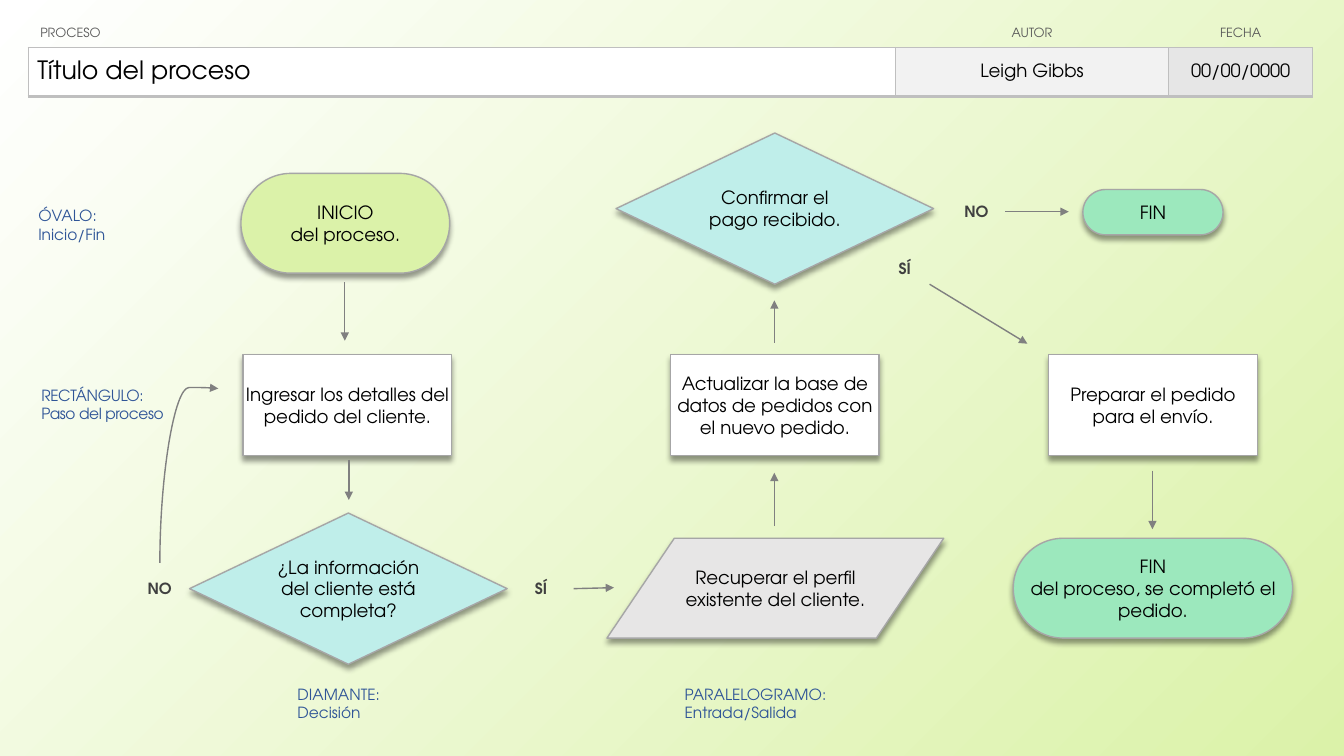
from lxml.etree import SubElement
from pptx import Presentation
from pptx.dml.color import RGBColor
from pptx.enum.shapes import MSO_CONNECTOR, MSO_SHAPE
from pptx.enum.text import MSO_ANCHOR, PP_ALIGN
from pptx.oxml.ns import qn
from pptx.util import Inches, Pt

FONT = "TeX Gyre Adventor"
BLACK = RGBColor(0x00, 0x00, 0x00)
WHITE = RGBColor(0xFF, 0xFF, 0xFF)
LIME = RGBColor(0xDB, 0xF2, 0xA9)
MINT = RGBColor(0x9C, 0xE8, 0xBD)
AQUA = RGBColor(0xBF, 0xEE, 0xEA)
SILVER = RGBColor(0xE7, 0xE6, 0xE6)
OUTLINE = RGBColor(0xA6, 0xA6, 0xA6)
ARROW = RGBColor(0x80, 0x80, 0x80)
LEGEND = RGBColor(0x2F, 0x55, 0x97)
ANSWER = RGBColor(0x40, 0x40, 0x40)
HEADING = RGBColor(0x59, 0x59, 0x59)
AUTHOR_FILL = RGBColor(0xF2, 0xF2, 0xF2)
DATE_FILL = RGBColor(0xE6, 0xE6, 0xE6)
BORDER = RGBColor(0xBF, 0xBF, 0xBF)


def write(frame, text, size, color, align, inset=0.02, bold=False):
    """Fill a text frame, one paragraph per line of text."""
    frame.text = text
    frame.word_wrap = True
    frame.vertical_anchor = MSO_ANCHOR.MIDDLE
    frame.margin_left = frame.margin_right = Inches(inset)
    frame.margin_top = frame.margin_bottom = Inches(inset)
    for paragraph in frame.paragraphs:
        paragraph.alignment = align
        paragraph.font.name = FONT
        paragraph.font.size = Pt(size)
        paragraph.font.bold = bold
        paragraph.font.color.rgb = color


def add_arrow(kind, x1, y1, x2, y2):
    arrow = slide.shapes.add_connector(
        kind, Inches(x1), Inches(y1), Inches(x2), Inches(y2))
    arrow.line.color.rgb = ARROW
    arrow.line.width = Pt(1)
    properties = arrow.element.spPr
    SubElement(properties.find(qn("a:ln")), qn("a:tailEnd"), type="triangle")
    SubElement(properties, qn("a:effectLst"))
    return arrow


presentation = Presentation()
presentation.slide_width = Inches(13.33)
presentation.slide_height = Inches(7.5)
slide = presentation.slides.add_slide(presentation.slide_layouts[6])

backdrop = slide.background.fill
backdrop.gradient()
backdrop.gradient_angle = 315
for stop, color, position in zip(backdrop.gradient_stops, (WHITE, LIME), (0, 1)):
    stop.color.rgb = color
    stop.position = position

# Header table
header = slide.shapes.add_table(
    2, 3, Inches(0.28), Inches(0.19), Inches(12.74), Inches(0.77)).table
header.first_row = header.horz_banding = False
NO_STYLE = "{2D5ABB26-0587-4C30-8999-92F81FD0307C}"
header._tbl.tblPr.find(qn("a:tableStyleId")).text = NO_STYLE
for row, height in zip(header.rows, (0.28, 0.49)):
    row.height = Inches(height)

header_columns = [
    # width, heading, value, value size, fill, alignment, left insets
    (8.6, "PROCESO", "Título del proceso", 18, WHITE, PP_ALIGN.LEFT, (0.12, 0.09)),
    (2.71, "AUTOR", "Leigh Gibbs", 13, AUTHOR_FILL, PP_ALIGN.CENTER, (0.01, 0.01)),
    (1.43, "FECHA", "00/00/0000", 13, DATE_FILL, PP_ALIGN.CENTER, (0.01, 0.01)),
]
for index, (width, heading, value, size, fill, align, insets) in enumerate(header_columns):
    header.columns[index].width = Inches(width)
    heading_cell, value_cell = header.cell(0, index), header.cell(1, index)
    write(heading_cell.text_frame, heading, 9, HEADING, align)
    write(value_cell.text_frame, value, size, BLACK, align)
    for cell, inset in zip((heading_cell, value_cell), insets):
        cell.vertical_anchor = MSO_ANCHOR.MIDDLE
        cell.margin_left = Inches(inset)
        cell.margin_right = cell.margin_top = Inches(0.01)
        cell.margin_bottom = 0
    heading_cell.fill.background()
    edges = value_cell._tc.get_or_add_tcPr()
    for side, points in (("L", 1), ("R", 1), ("T", 1), ("B", 2.25)):
        edge = SubElement(edges, qn(f"a:ln{side}"), w=str(Pt(points)))
        paint = SubElement(edge, qn("a:solidFill"))
        SubElement(paint, qn("a:srgbClr"), val=str(BORDER))
    value_cell.fill.solid()
    value_cell.fill.fore_color.rgb = fill

# Process steps
OVAL = MSO_SHAPE.ROUNDED_RECTANGLE
STEP = MSO_SHAPE.FLOWCHART_PROCESS
DECISION = MSO_SHAPE.FLOWCHART_DECISION
DATA = MSO_SHAPE.FLOWCHART_DATA
steps = [
    (OVAL, 2.39, 1.72, 2.07, 0.99, LIME, "INICIO\ndel proceso."),
    (STEP, 2.41, 3.52, 2.07, 1, WHITE, "Ingresar los detalles del pedido del cliente."),
    (DECISION, 1.88, 5.09, 3.15, 1.5, AQUA, "¿La información del cliente está completa?"),
    (DATA, 6.02, 5.34, 3.34, 0.99, SILVER, "Recuperar el perfil existente del cliente."),
    (STEP, 6.65, 3.52, 2.07, 1, WHITE,
     "Actualizar la base de datos de pedidos con el nuevo pedido."),
    (DECISION, 6.11, 1.32, 3.15, 1.5, AQUA, "Confirmar el pago recibido."),
    (OVAL, 10.74, 1.88, 1.39, 0.45, MINT, "FIN"),
    (STEP, 10.4, 3.52, 2.07, 1, WHITE, "Preparar el pedido\npara el envío."),
    (OVAL, 10.05, 5.34, 2.77, 0.99, MINT, "FIN\ndel proceso, se completó el pedido."),
]
for kind, left, top, width, height, fill, text in steps:
    step = slide.shapes.add_shape(
        kind, Inches(left), Inches(top), Inches(width), Inches(height))
    if kind == OVAL:
        step.adjustments[0] = 0.5
    step.fill.solid()
    step.fill.fore_color.rgb = fill
    step.line.color.rgb = OUTLINE
    step.line.width = Pt(1)
    step.shadow.inherit = False
    shadow = SubElement(
        step.element.spPr.find(qn("a:effectLst")), qn("a:outerShdw"),
        blurRad=str(Pt(4)), dist=str(Pt(3)), dir="5400000", algn="t", rotWithShape="0")
    shade = SubElement(shadow, qn("a:srgbClr"), val=str(BLACK))
    SubElement(shade, qn("a:alpha"), val="40000")
    inset = 0 if kind == DECISION else 0.02
    write(step.text_frame, text, 13, BLACK, PP_ALIGN.CENTER, inset)

# Legend and decision answers
legend = [
    (0.36, 1.98, 1.73, "ÓVALO:\nInicio/Fin", 0),
    (0.39, 3.76, 1.38, "RECTÁNGULO:\nPaso del proceso", -30),
    (2.93, 6.73, 1.52, "DIAMANTE:\nDecisión", 0),
    (6.77, 6.73, 2.58, "PARALELOGRAMO:\nEntrada/Salida", 0),
]
for left, top, width, text, spacing in legend:
    note = slide.shapes.add_textbox(Inches(left), Inches(top), Inches(width), Inches(0.5))
    write(note.text_frame, text, 11, LEGEND, PP_ALIGN.LEFT)
    if spacing:
        for paragraph in note.text_frame.paragraphs:
            paragraph.runs[0].font._element.set("spc", str(spacing))

answers = [
    (1.17, 5.59, 0.83, "NO"),
    (4.97, 5.59, 0.79, "SÍ"),
    (8.58, 2.41, 0.79, "SÍ"),
    (9.29, 1.85, 0.79, "NO"),
]
for left, top, width, text in answers:
    answer = slide.shapes.add_textbox(Inches(left), Inches(top), Inches(width), Inches(0.5))
    write(answer.text_frame, text, 11, ANSWER, PP_ALIGN.CENTER, bold=True)

# Flow arrows
flow = [
    (3.42, 2.8, 3.42, 3.38),
    (3.46, 4.56, 3.46, 4.96),
    (5.69, 5.84, 6.09, 5.83),
    (7.68, 5.22, 7.68, 4.69),
    (7.68, 3.4, 7.68, 2.98),
    (9.97, 2.1, 10.6, 2.1),
    (9.22, 2.82, 10.19, 3.41),
    (11.43, 4.67, 11.43, 5.25),
]
for ends in flow:
    add_arrow(MSO_CONNECTOR.STRAIGHT, *ends)

# The return arrow is laid out flat, then turned a quarter
return_arrow = add_arrow(MSO_CONNECTOR.CURVE, 2.74, 5.01, 1.01, 4.43)
return_properties = return_arrow.element.spPr
return_properties.find(qn("a:xfrm")).set("rot", "5400000")
bend = return_properties.find(qn("a:prstGeom")).find(qn("a:avLst"))
SubElement(bend, qn("a:gd"), name="adj1", fmla="val 100600")

presentation.save("out.pptx")
